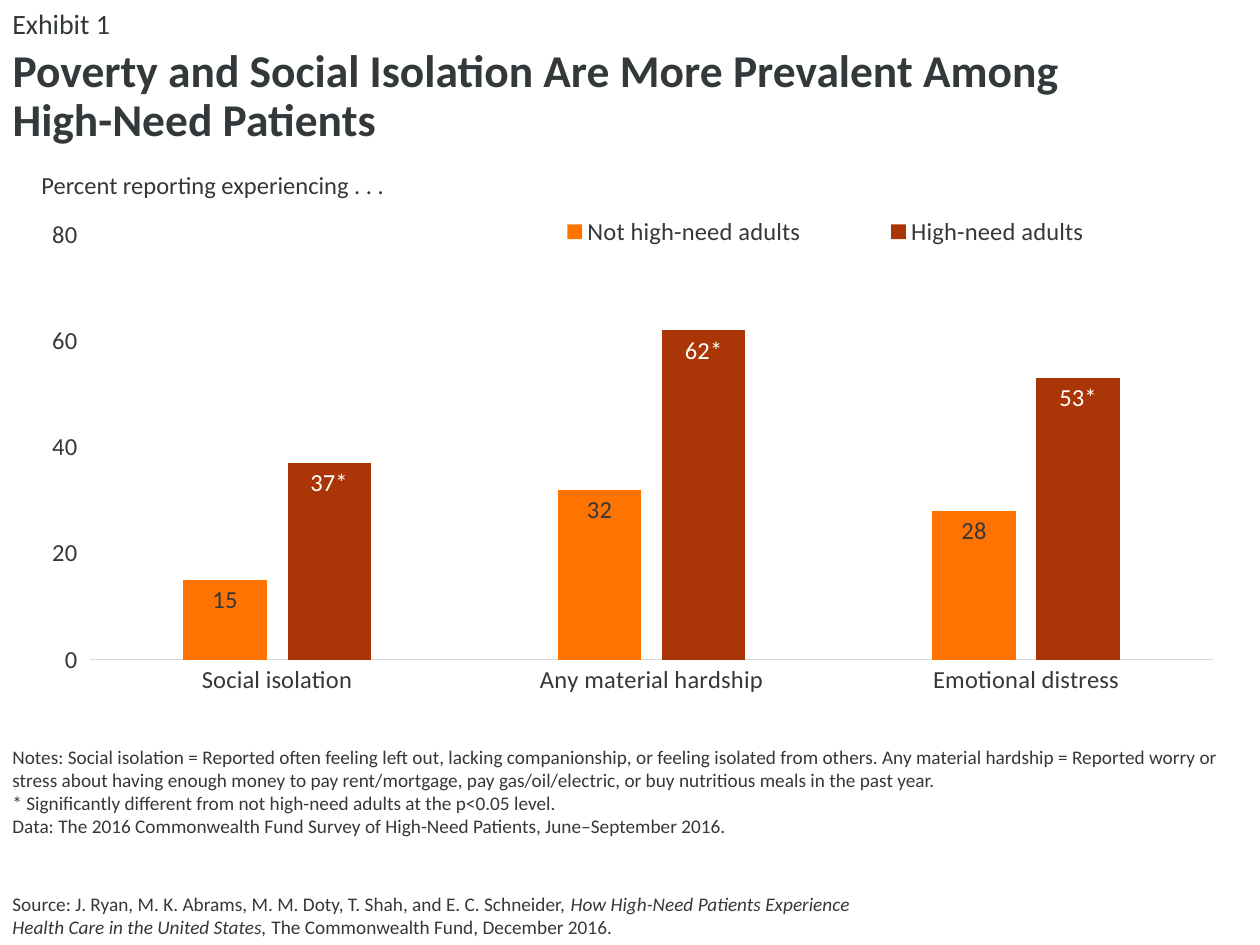
from lxml import etree
from pptx import Presentation
from pptx.chart.data import CategoryChartData
from pptx.dml.color import RGBColor
from pptx.enum.chart import XL_CHART_TYPE, XL_LABEL_POSITION, XL_LEGEND_POSITION, XL_TICK_MARK
from pptx.enum.text import MSO_ANCHOR, PP_ALIGN
from pptx.oxml import parse_xml
from pptx.oxml.ns import nsdecls
from pptx.util import Pt

COLUMNS = XL_CHART_TYPE.COLUMN_CLUSTERED
INSIDE_END = XL_LABEL_POSITION.INSIDE_END
LEGEND_TOP = XL_LEGEND_POSITION.TOP
NO_TICK, TICK_OUT = XL_TICK_MARK.NONE, XL_TICK_MARK.OUTSIDE
TOP, BOTTOM = MSO_ANCHOR.TOP, MSO_ANCHOR.BOTTOM
LEFT = PP_ALIGN.LEFT

PX = 914400 / 126
FONT = "Calibri"
INK, WHITE, AXIS_GREY = "33383B", "FFFFFF", "D9D9D9"
ORANGE, RUST = "FF7300", "AA3506"


def color(value):
    return RGBColor.from_string(value)


def write(shape, box, paragraphs, size, anchor=TOP, bold=False, wrap=True):
    """Place a text shape and fill it; each paragraph is a list of (text, italic) runs."""
    shape.left, shape.top, shape.width, shape.height = (round(n * PX) for n in box)
    frame = shape.text_frame
    frame.word_wrap = wrap
    frame.vertical_anchor = anchor
    for index, runs in enumerate(paragraphs):
        paragraph = frame.add_paragraph() if index else frame.paragraphs[0]
        paragraph.alignment = LEFT
        for text, italic in runs:
            for number, line in enumerate(text.split("\n")):
                if number:
                    paragraph.add_line_break()
                run = paragraph.add_run()
                run.text = line
                run.font.name, run.font.size = FONT, Pt(size)
                run.font.bold, run.font.italic = bold, italic
                run.font.color.rgb = color(INK)


prs = Presentation()
prs.slide_width, prs.slide_height = round(1260 * PX), round(945 * PX)
slide = prs.slides.add_slide(prs.slide_layouts[5])

# Headline
headline = slide.shapes.title
write(headline, (0, 42, 1260, 101),
      [[("Poverty and Social Isolation Are More Prevalent Among\nHigh-Need Patients", False)]],
      26, bold=True)
headline.text_frame.paragraphs[0].line_spacing = 0.9

# Chart data: series name, values, fill, label colour, label format
groups = [
    ("Not high-need adults", (15, 32, 28), ORANGE, INK, "0"),
    ("High-need adults", (37, 62, 53), RUST, WHITE, '0"*"'),
]
experiences = CategoryChartData()
experiences.categories = ["Social isolation", "Any material hardship", "Emotional distress"]
for name, values, *_ in groups:
    experiences.add_series(name, values)

chart = slide.shapes.add_chart(
    COLUMNS, *(round(n * PX) for n in (23, 190, 1216, 522)), experiences).chart
chart.has_title = False
chart.font.name, chart.font.size = FONT, Pt(14)
chart.font.color.rgb = color(INK)

# Columns and their labels
plot = chart.plots[0]
plot.gap_width, plot.overlap = 225, -25
plot.vary_by_categories = False
for series, (_, _, fill, label_color, label_format) in zip(plot.series, groups):
    series.format.fill.solid()
    series.format.fill.fore_color.rgb = color(fill)
    labels = series.data_labels
    labels.show_value = True
    labels.position = INSIDE_END
    labels.number_format, labels.number_format_is_linked = label_format, False
    labels.font.name, labels.font.size = FONT, Pt(14)
    labels.font.color.rgb = color(label_color)

# Axes
percent = chart.value_axis
percent.minimum_scale, percent.maximum_scale, percent.major_unit = 0, 80, 20
percent.has_major_gridlines = False
percent.major_tick_mark = TICK_OUT
percent.format.line.fill.background()
experience = chart.category_axis
experience.major_tick_mark = NO_TICK
experience.format.line.color.rgb = color(AXIS_GREY)
experience.format.line.width = Pt(0.75)

# Legend and plot area at fixed fractions of the chart
chart.has_legend = True
legend = chart.legend
legend.position = LEGEND_TOP
legend.include_in_layout = False
plot_area = plot._element.getparent()
for old in plot_area.findall("{*}layout") + legend._element.findall("{*}layout"):
    old.getparent().remove(old)
for parent, slot, target, fractions in (
    (plot_area, 0, "inner", (0.055, 0.086, 0.924, 0.814)),
    (legend._element, 1, None, (0.38, 0.04, 0.56, 0.08)),
):
    layout = parse_xml(f"<c:layout {nsdecls('c')}><c:manualLayout/></c:layout>")
    settings = [("layoutTarget", target)] if target else []
    settings += [("xMode", "edge"), ("yMode", "edge")]
    settings += zip("xywh", map(str, fractions))
    for tag, value in settings:
        etree.SubElement(layout[0], layout.tag.replace("layout", tag), val=value)
    parent.insert(slot, layout)

# Exhibit number, chart caption, notes and source
notes = [
    "Notes: Social isolation = Reported often feeling left out, lacking companionship, or feeling "
    "isolated from others. Any material hardship = Reported worry or stress about having enough "
    "money to pay rent/mortgage, pay gas/oil/electric, or buy nutritious meals in the past year.",
    "* Significantly different from not high-need adults at the p<0.05 level.",
    "Data: The 2016 Commonwealth Fund Survey of High-Need Patients, June–September 2016.",
]
source = [
    ("Source: J. Ryan, M. K. Abrams, M. M. Doty, T. Shah, and E. C. Schneider, ", False),
    ("How High-Need Patients Experience Health Care in the United States, ", True),
    ("The Commonwealth Fund, December 2016.", False),
]
for box, paragraphs, size, anchor, wrap in (
    ((0, 0, 1260, 42), [[("Exhibit 1", False)]], 16, TOP, True),
    ((29, 164, 372, 43), [[("Percent reporting experiencing . . .", False)]], 14, TOP, False),
    ((0, 738, 1260, 106), [[(note, False)] for note in notes], 11, BOTTOM, True),
    ((0, 886, 898, 59), [source], 11, BOTTOM, True),
):
    write(slide.shapes.add_textbox(0, 0, 0, 0), box, paragraphs, size, anchor, wrap=wrap)

prs.save("out.pptx")
